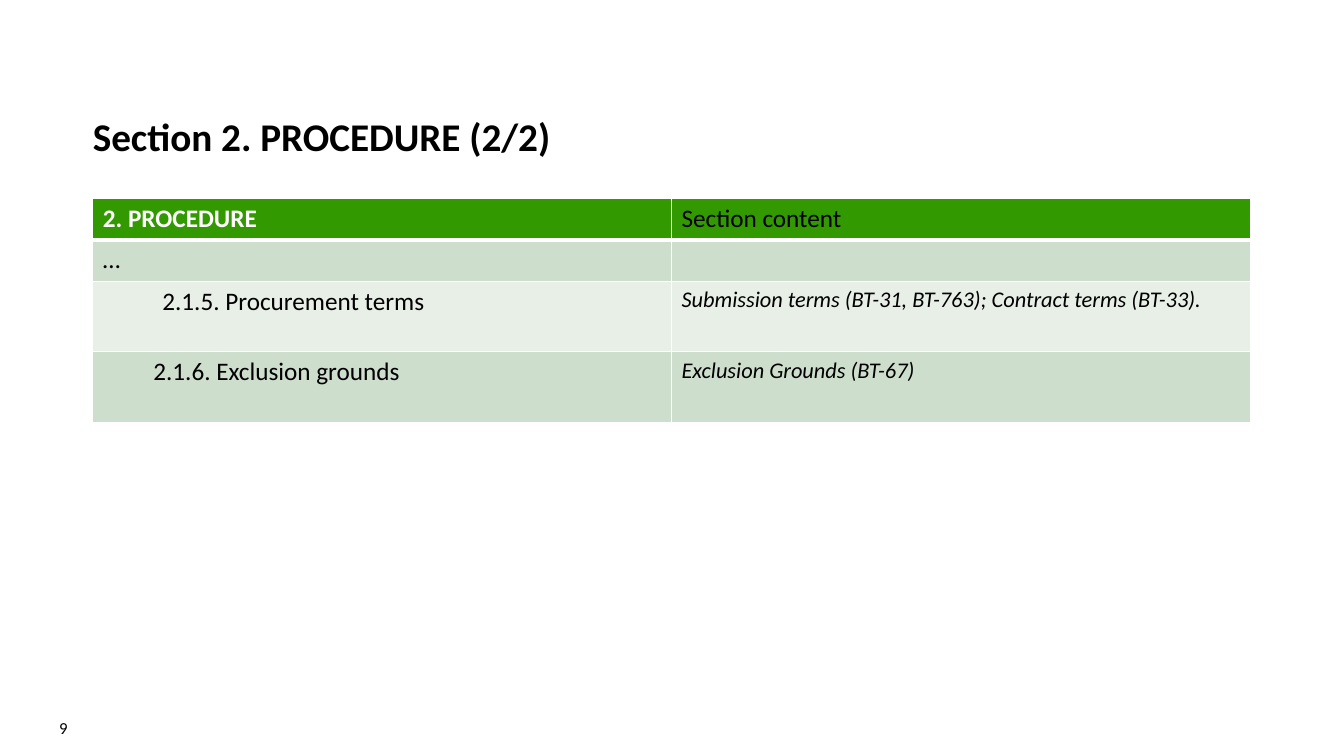
from pptx import Presentation
from pptx.util import Inches, Pt
from pptx.dml.color import RGBColor
from pptx.enum.text import PP_ALIGN, MSO_ANCHOR, MSO_AUTO_SIZE
from pptx.oxml import parse_xml
from pptx.oxml.ns import nsdecls

TITLE = "Section 2. PROCEDURE (2/2)"
NUMBER = "9"
ROWS = [
    ("2. PROCEDURE", "Section content"),
    ("…", ""),
    ("2.1.5. Procurement terms",
     "Submission terms (BT-31, BT-763); Contract terms (BT-33)."),
    ("2.1.6. Exclusion grounds", "Exclusion Grounds (BT-67)"),
]
HEIGHTS = [0.41, 0.41, 0.7, 0.7]
INDENTS = [0, 0, 0.59, 0.5]
LEFT, WIDTH, TOP = 0.92, 11.48, 1.97

THEME = {
    "font": "Calibri", "ink": "000000", "white": "FFFFFF",
    "head": "339900", "bands": ("E8EFE7", "CEDECC"),
    "title": 28, "cell": 18, "note": 16, "page": 12,
}


def style(para, size, color="ink", bold=False, italic=False):
    looks = {"name": THEME["font"], "size": Pt(size),
             "bold": bold, "italic": italic}
    for key, value in looks.items():
        setattr(para.font, key, value)
    para.font.color.rgb = RGBColor.from_string(THEME[color])


def setup(frame, **looks):
    for key, value in looks.items():
        setattr(frame, key, value)


def border(cell, low):
    props = cell._tc.get_or_add_tcPr()
    for side, width in (("L", 1), ("R", 1), ("T", 1), ("B", low)):
        props.append(parse_xml(
            f'<a:ln{side} {nsdecls("a")} w="{Pt(width)}"><a:solidFill>'
            f'<a:srgbClr val="{THEME["white"]}"/></a:solidFill></a:ln{side}>'))


def add_title(slide):
    title = slide.shapes.title
    setup(title, left=Inches(LEFT), top=Inches(0.14),
          width=Inches(WIDTH), height=Inches(1.45))
    frame = title.text_frame
    setup(frame, text=TITLE, word_wrap=True, auto_size=MSO_AUTO_SIZE.NONE,
          vertical_anchor=MSO_ANCHOR.BOTTOM, margin_left=0, margin_right=0,
          margin_top=Inches(0.05), margin_bottom=0)
    para = frame.paragraphs[0]
    setup(para, alignment=PP_ALIGN.LEFT, line_spacing=0.9)
    style(para, THEME["title"], bold=True)


def add_grid(slide):
    table = slide.shapes.add_table(
        len(ROWS), 2, Inches(LEFT), Inches(TOP),
        Inches(WIDTH), Inches(sum(HEIGHTS))).table
    for col in table.columns:
        col.width = Inches(WIDTH / 2)
    for r, row in enumerate(ROWS):
        table.rows[r].height = Inches(HEIGHTS[r])
        for c, words in enumerate(row):
            cell = table.cell(r, c)
            cell.text = words
            border(cell, 1 if r else 3)
            cell.fill.solid()
            fill = THEME["bands"][r % 2] if r else THEME["head"]
            cell.fill.fore_color.rgb = RGBColor.from_string(fill)
            para = cell.text_frame.paragraphs[0]
            if c == 0 and INDENTS[r]:
                props = para._p.get_or_add_pPr()
                props.set("marL", str(Inches(INDENTS[r])))
                props.set("indent", "0")
            first = r == 0 and c == 0
            note = r > 1 and c == 1
            style(para, THEME["note" if note else "cell"],
                  "white" if first else "ink", bold=first, italic=note)


def add_page(slide):
    box = slide.shapes.add_textbox(0, Inches(7.02), Inches(0.77), Inches(0.4))
    frame = box.text_frame
    setup(frame, text=NUMBER, word_wrap=True,
          vertical_anchor=MSO_ANCHOR.MIDDLE)
    para = frame.paragraphs[0]
    para.alignment = PP_ALIGN.RIGHT
    style(para, THEME["page"])


def main():
    deck = Presentation()
    setup(deck, slide_width=Inches(13.33), slide_height=Inches(7.5))
    slide = deck.slides.add_slide(deck.slide_layouts[5])
    add_title(slide)
    add_grid(slide)
    add_page(slide)
    deck.save("out.pptx")


if __name__ == "__main__":
    main()
